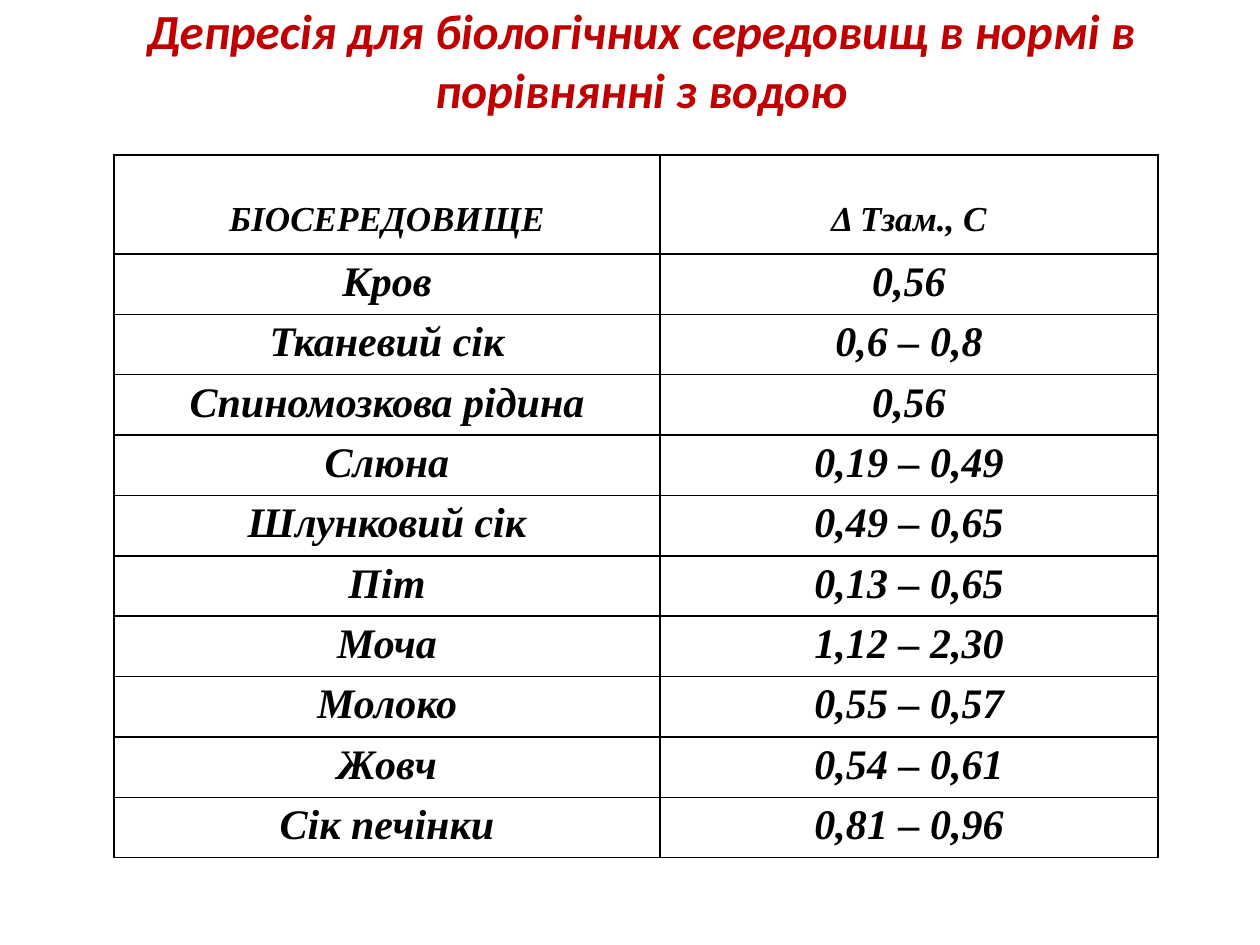
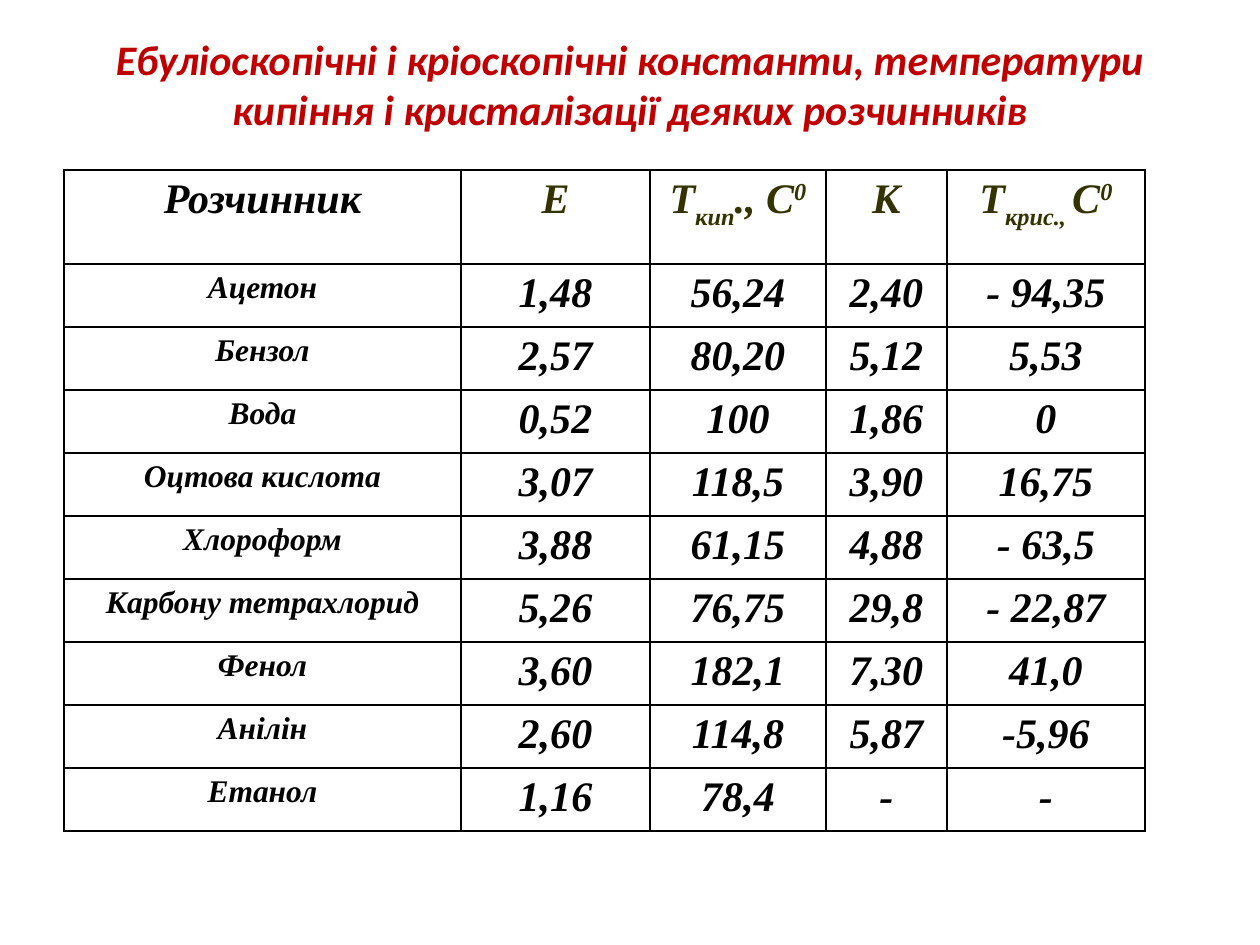
import pptx
import pptx.util
import pptx.dml.color
import pptx.enum.text
import pptx.oxml
import pptx.oxml.ns
from lxml import etree

RED = pptx.dml.color.RGBColor(0xC0, 0x00, 0x00)
BLACK = pptx.dml.color.RGBColor(0x00, 0x00, 0x00)
OLIVE = pptx.dml.color.RGBColor(0x33, 0x33, 0x00)
HEAD, BODY = "Calibri", "Times New Roman"
SUB, SUP = -30000, 30000

# Content: a cell is a string or a list of (text, baseline) pieces
FLUIDS = [
    ("БІОСЕРЕДОВИЩЕ", "Δ Тзам., С"),
    ("Кров", "0,56"),
    ("Тканевий сік", "0,6 – 0,8"),
    ("Спиномозкова рідина", "0,56"),
    ("Слюна", "0,19 – 0,49"),
    ("Шлунковий сік", "0,49 – 0,65"),
    ("Піт", "0,13 – 0,65"),
    ("Моча", "1,12 – 2,30"),
    ("Молоко", "0,55 – 0,57"),
    ("Жовч", "0,54 – 0,61"),
    ("Сік печінки", "0,81 – 0,96"),
]
BOIL = [("Т", 0), ("кип", SUB), ("., С", 0), ("0", SUP)]
FREEZE = [("Т", 0), ("крис., ", SUB), ("С", 0), ("0", SUP)]
SOLVENTS = [
    ("Розчинник", "Е", BOIL, "К", FREEZE),
    ("Ацетон", "1,48", "56,24", "2,40", "- 94,35"),
    ("Бензол", "2,57", "80,20", "5,12", "5,53"),
    ("Вода", "0,52", "100", "1,86", "0"),
    ("Оцтова кислота", "3,07", "118,5", "3,90", "16,75"),
    ("Хлороформ", "3,88", "61,15", "4,88", "- 63,5"),
    ("Карбону тетрахлорид", "5,26", "76,75", "29,8", "- 22,87"),
    ("Фенол", "3,60", "182,1", "7,30", "41,0"),
    ("Анілін", "2,60", "114,8", "5,87", "-5,96"),
    ("Етанол", "1,16", "78,4", "-", "-"),
]


def fluid_style(row, col):
    # The header sits low in its tall row
    return dict(size=20, top=45) if row == 0 else dict(size=24, top=5)


def solvent_style(row, col):
    return dict(size=18 if row and col == 0 else 24, top=6,
                color=OLIVE if row == 0 and col else BLACK)


SLIDES = [
    dict(title="Депресія для біологічних середовищ в нормі в порівнянні з водою",
         box=(74, 4, 1134, 110), size=28, foot=6,
         rows=FLUIDS, spot=(114, 155), cols=(546, 498), high=(99, 59),
         style=fluid_style),
    dict(title="Ебуліоскопічні і кріоскопічні константи, температури "
               "кипіння і кристалізації деяких розчинників",
         box=(63, 53, 1134, 112), size=24, foot=57,
         rows=SOLVENTS, spot=(64, 170), cols=(397, 189, 176, 121, 198),
         high=(94, 63), style=solvent_style),
]


def px(count):
    return pptx.util.Emu(round(count * 914400 / 126))


def write(frame, text, size=24, color=BLACK, font=BODY):
    """Fill a text frame with one centred bold italic paragraph."""
    para = frame.paragraphs[0]
    para.alignment = pptx.enum.text.PP_ALIGN.CENTER
    for piece, base in [(text, 0)] if isinstance(text, str) else text:
        run = para.add_run()
        run.text = piece
        run.font.name = font
        run.font.size = pptx.util.Pt(size)
        run.font.bold = run.font.italic = True
        run.font.color.rgb = color
        if base:
            run._r.get_or_add_rPr().set("baseline", str(base))


def edge(cell):
    """Draw a thin black line on each side of a cell."""
    props = cell._tc.get_or_add_tcPr()
    name = pptx.oxml.ns.qn
    for spot, side in enumerate(("a:lnL", "a:lnR", "a:lnT", "a:lnB")):
        line = etree.Element(name(side), w=str(pptx.util.Pt(1)))
        fill = etree.SubElement(line, name("a:solidFill"))
        etree.SubElement(fill, name("a:srgbClr"), val=str(BLACK))
        props.insert(spot, line)


def add_title(slide, text, box, size, foot):
    frame = slide.shapes.add_textbox(*map(px, box)).text_frame
    frame.word_wrap = True
    frame.vertical_anchor = pptx.enum.text.MSO_ANCHOR.MIDDLE
    frame.margin_bottom = px(foot)
    write(frame, text, size=size, color=RED, font=HEAD)


def add_grid(slide, rows, spot, cols, high, style):
    first, rest = high
    size = (sum(cols), first + rest * (len(rows) - 1))
    grid = slide.shapes.add_table(len(rows), len(cols),
                                  *map(px, spot + size)).table
    grid.first_row = grid.horz_banding = False
    for col, width in zip(grid.columns, cols):
        col.width = px(width)
    for r, row in enumerate(rows):
        grid.rows[r].height = px(rest if r else first)
        for c, text in enumerate(row):
            cell = grid.cell(r, c)
            look = style(r, c)
            cell.margin_top = px(look.pop("top"))
            cell.margin_bottom = px(5)
            cell.fill.background()
            edge(cell)
            write(cell.text_frame, text, **look)


def main():
    deck = pptx.Presentation()
    deck.slide_width, deck.slide_height = px(1260), px(945)
    for page in SLIDES:
        slide = deck.slides.add_slide(deck.slide_layouts[6])
        add_title(slide, page["title"], page["box"], page["size"], page["foot"])
        add_grid(slide, page["rows"], page["spot"], page["cols"],
                 page["high"], page["style"])
    deck.save("out.pptx")


if __name__ == "__main__":
    main()
